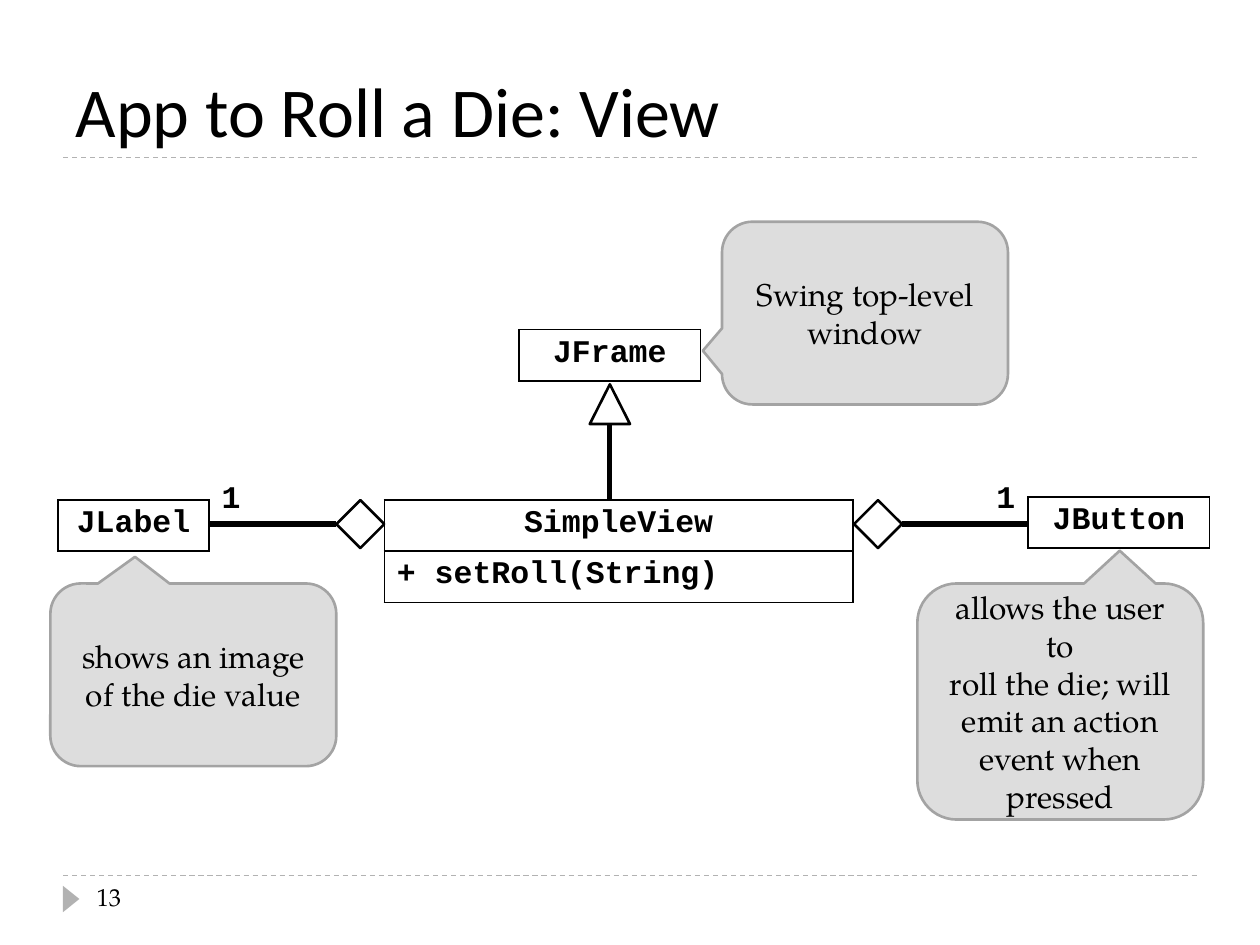
from dataclasses import dataclass

from lxml import etree
from pptx import Presentation
from pptx.dml import color
from pptx.enum import dml, shapes, text
from pptx.oxml import ns
from pptx.util import Pt

BLACK, WHITE, GREY = "000000", "FFFFFF", "B2B2B2"
CALLOUT_FILL, CALLOUT_EDGE = "DDDDDD", "A3A3A3"
CODE = {"name": "Courier New", "size": Pt(18), "bold": True}
BODY = {"name": "TeX Gyre Pagella", "size": Pt(18)}
PAGE = {"name": "TeX Gyre Pagella", "size": Pt(14)}
HEADING = {"name": "Calibri", "size": Pt(40), "bold": False}
ROW_HEIGHT = 29.2
DIAMOND_SIZE = 27.4
AXIS_X, AXIS_Y = 348.5, 299.5
CENTER, LEFT = text.PP_ALIGN.CENTER, text.PP_ALIGN.LEFT


@dataclass(frozen=True)
class Box:
    left: float
    top: float
    width: float
    height: float

    def lengths(self) -> list:
        return [Pt(v) for v in (self.left, self.top, self.width, self.height)]


@dataclass(frozen=True)
class UmlClass:
    name: str
    left: float
    top: float
    width: float
    methods: tuple = ()


@dataclass(frozen=True)
class Callout:
    lines: tuple
    box: Box
    tip: tuple


@dataclass(frozen=True)
class Aggregation:
    diamond_left: float
    diamond_site: int
    part_edge: float
    count_left: float


CLASSES = (
    UmlClass("SimpleView", 219.6, 285.8, 267.8, ("+ setRoll(String)",)),
    UmlClass("JLabel", 33.1, 285.8, 86.4),
    UmlClass("JButton", 587.5, 283.9, 103.7),
    UmlClass("JFrame", 296.6, 188.4, 103.7),
)
CALLOUTS = (
    Callout(("allows the user to", "roll the die; will emit an action event when pressed"),
            Box(524.2, 333.4, 163.4, 134.9), (0.208, -0.639)),
    Callout(("shows an image", "of the die value"),
            Box(28.8, 333.4, 163.4, 104.4), (-0.204, -0.646)),
    Callout(("Swing top-level", "window"),
            Box(412.6, 126.7, 163.4, 104.4), (-0.567, 0.206)),
)
AGGREGATIONS = (
    Aggregation(192.2, 1, 119.5, 119.5),
    Aggregation(488, 3, 587.5, 562.3),
)


def rgb(value: str) -> color.RGBColor:
    return color.RGBColor.from_string(value)


def write(frame, lines: tuple, style: dict, align=LEFT) -> None:
    for index, line in enumerate(lines):
        paragraph = frame.paragraphs[0] if index == 0 else frame.add_paragraph()
        paragraph.alignment = align
        run = paragraph.add_run()
        run.text = line
        for key, value in style.items():
            setattr(run.font, key, value)
        run.font.color.rgb = rgb(BLACK)


def add_label(slide, box: Box, label: str, style: dict, wrap: bool) -> None:
    frame = slide.shapes.add_textbox(*box.lengths()).text_frame
    frame.word_wrap = wrap
    write(frame, (label,), style)


def add_figure(slide, kind, box: Box, fill: str, edge: str = "", width: float = 1.5):
    figure = slide.shapes.add_shape(kind, *box.lengths())
    figure.shadow.inherit = False
    figure.fill.solid()
    figure.fill.fore_color.rgb = rgb(fill)
    if edge:
        figure.line.color.rgb = rgb(edge)
        figure.line.width = Pt(width)
    else:
        figure.line.fill.background()
    return figure


def add_line(slide, start: tuple, end: tuple, stroke: str, width: float, dash=None):
    line = slide.shapes.add_connector(
        shapes.MSO_CONNECTOR.STRAIGHT, *[Pt(v) for v in start + end])
    line.line.color.rgb = rgb(stroke)
    line.line.width = Pt(width)
    if dash:
        line.line.dash_style = dash
    etree.SubElement(line._element.spPr, ns.qn("a:effectLst"))
    return line


def add_borders(cell) -> None:
    properties = cell._tc.get_or_add_tcPr()
    for side in ("lnL", "lnR", "lnT", "lnB"):
        border = etree.SubElement(properties, ns.qn(f"a:{side}"), w=str(int(Pt(1))))
        fill = etree.SubElement(border, ns.qn("a:solidFill"))
        etree.SubElement(fill, ns.qn("a:srgbClr"), val=BLACK)


def add_class(slide, uml: UmlClass) -> None:
    rows = (uml.name,) + uml.methods
    box = Box(uml.left, uml.top, uml.width, ROW_HEIGHT * len(rows))
    table = slide.shapes.add_table(len(rows), 1, *box.lengths()).table
    table.first_row = table.horz_banding = False
    for index, label in enumerate(rows):
        table.rows[index].height = Pt(ROW_HEIGHT)
        cell = table.cell(index, 0)
        add_borders(cell)
        cell.fill.solid()
        cell.fill.fore_color.rgb = rgb(WHITE)
        write(cell.text_frame, (label,), CODE, LEFT if index else CENTER)


def add_callout(slide, callout: Callout) -> None:
    bubble = add_figure(slide, shapes.MSO_SHAPE.ROUNDED_RECTANGULAR_CALLOUT,
                        callout.box, CALLOUT_FILL, CALLOUT_EDGE)
    for index, value in enumerate(callout.tip):
        bubble.adjustments[index] = value
    bubble.text_frame.word_wrap = True
    bubble.text_frame.vertical_anchor = text.MSO_ANCHOR.MIDDLE
    write(bubble.text_frame, callout.lines, BODY, CENTER)


def add_aggregation(slide, link: Aggregation) -> None:
    box = Box(link.diamond_left, AXIS_Y - DIAMOND_SIZE / 2, DIAMOND_SIZE, DIAMOND_SIZE)
    diamond = add_figure(slide, shapes.MSO_SHAPE.DIAMOND, box, WHITE, BLACK)
    line = add_line(slide, (link.diamond_left, AXIS_Y), (link.part_edge, AXIS_Y), BLACK, 3)
    line.begin_connect(diamond, link.diamond_site)
    add_label(slide, Box(link.count_left, 269.3, 25.2, 28.8), "1", CODE, False)


def add_title(slide) -> None:
    title = slide.shapes.title
    title.left, title.top, title.width, title.height = Box(36, 12.2, 648, 77.8).lengths()
    title.text_frame.vertical_anchor = text.MSO_ANCHOR.BOTTOM
    write(title.text_frame, ("App to Roll a Die: View",), HEADING)


def main() -> None:
    deck = Presentation()
    deck.slide_width, deck.slide_height = Pt(720), Pt(540)
    slide = deck.slides.add_slide(deck.slide_layouts[5])

    for rule_y in (500.4, 90):
        add_line(slide, (36, rule_y), (684, rule_y), GREY, 0.75, dml.MSO_LINE.DASH)
    page_marker = add_figure(slide, shapes.MSO_SHAPE.ISOSCELES_TRIANGLE,
                             Box(33.1, 509, 15.1, 9.4), GREY)
    page_marker.rotation = 90
    add_title(slide)
    add_label(slide, Box(48.2, 500.4, 156.2, 28.8), "13", PAGE, True)

    for uml in CLASSES:
        add_class(slide, uml)
    for link in AGGREGATIONS:
        add_aggregation(slide, link)
    add_figure(slide, shapes.MSO_SHAPE.ISOSCELES_TRIANGLE,
               Box(AXIS_X - 11.5, 219.6, 23, 22.7), WHITE, BLACK)
    add_line(slide, (AXIS_X, 242.3), (AXIS_X, 285.8), BLACK, 3)
    for callout in CALLOUTS:
        add_callout(slide, callout)

    deck.save("out.pptx")


if __name__ == "__main__":
    main()
